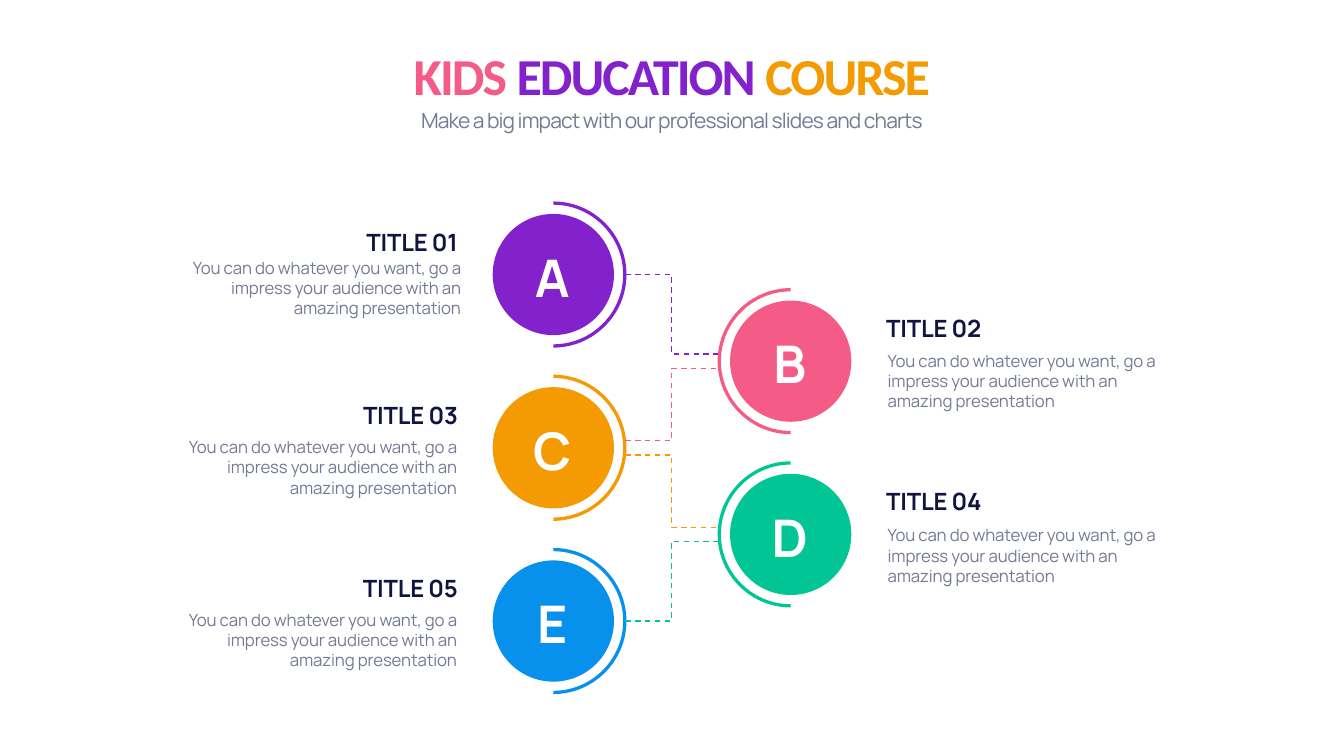
import dataclasses
import itertools

import lxml.etree
import pptx
import pptx.dml.color
import pptx.enum.dml
import pptx.enum.shapes
import pptx.enum.text
import pptx.oxml.ns
import pptx.shapes.autoshape
import pptx.slide
import pptx.util

Pt = pptx.util.Pt
RGBColor = pptx.dml.color.RGBColor
ALIGN = pptx.enum.text.PP_ALIGN
ANCHOR = pptx.enum.text.MSO_ANCHOR
qn = pptx.oxml.ns.qn

PURPLE = RGBColor(0x83, 0x22, 0xCC)
PINK = RGBColor(0xF5, 0x5B, 0x87)
ORANGE = RGBColor(0xF4, 0x9A, 0x02)
GREEN = RGBColor(0x02, 0xC5, 0x95)
BLUE = RGBColor(0x08, 0x90, 0xED)
NAVY = RGBColor(0x11, 0x13, 0x40)
GREY = RGBColor(0x74, 0x7A, 0x94)
WHITE = RGBColor(0xFF, 0xFF, 0xFF)

PAGE_WIDTH, PAGE_HEIGHT = 1919.5, 1080
LEFT_CENTER, RIGHT_CENTER = 790.3, 1129.3
FIRST_CENTER, STEP_GAP = 392.2, 123.75
DISC_RADIUS, RING_INNER, RING_OUTER = 86.6, 99.7, 104.4
LINK_LEFT, LINK_RIGHT, LINK_OFFSET = 892.8, 1025.3, 10.2
CURVE_PULL = 0.55
BODY = "You can do whatever you want, go a impress your audience with an amazing presentation"


@dataclasses.dataclass(frozen=True)
class TextStyle:
    font: dict
    tracking: int
    anchor: ANCHOR = ANCHOR.TOP
    leading: float | None = None


@dataclasses.dataclass(frozen=True)
class Step:
    letter: str
    title: str
    color: RGBColor
    body_rise: float
    body_width: float = 405.4


@dataclasses.dataclass(frozen=True)
class Area:
    left: float
    top: float
    width: float
    height: float


HEADING = TextStyle({"name": "Calibri", "size": Pt(74), "bold": True}, -290, ANCHOR.BOTTOM, 94)
SUBTITLE = TextStyle({"name": "Manrope", "size": Pt(30), "bold": False}, -120, leading=42)
STEP_TITLE = TextStyle({"name": "Manrope", "size": Pt(34), "bold": True}, -30, ANCHOR.BOTTOM)
STEP_BODY = TextStyle({"name": "Manrope", "size": Pt(24), "bold": False}, -20)
LETTER = TextStyle({"name": "Manrope", "size": Pt(74), "bold": True}, -290, ANCHOR.MIDDLE)

STEPS = [
    Step("A", "TITLE 01", PURPLE, 27.9, 411.1),
    Step("B", "TITLE 02", PINK, 19.2),
    Step("C", "TITLE 03", ORANGE, 19.1),
    Step("D", "TITLE 04", GREEN, 16.8),
    Step("E", "TITLE 05", BLUE, 20.3),
]


def add_text(page: pptx.slide.Slide, area: Area, spans: list[tuple[str, RGBColor]],
             style: TextStyle, alignment: ALIGN) -> None:
    box = page.shapes.add_textbox(*map(Pt, dataclasses.astuple(area)))
    frame = box.text_frame
    frame_format = {
        "word_wrap": True,
        "auto_size": pptx.enum.text.MSO_AUTO_SIZE.SHAPE_TO_FIT_TEXT,
        "vertical_anchor": style.anchor,
    }
    for name, value in frame_format.items():
        setattr(frame, name, value)
    para = frame.paragraphs[0]
    para.alignment = alignment
    if style.leading:
        para.line_spacing = Pt(style.leading)
    for text, color in spans:
        span = para.add_run()
        span.text = text
        for name, value in style.font.items():
            setattr(span.font, name, value)
        span.font.color.rgb = color
        span._r.get_or_add_rPr().set("spc", str(style.tracking))


def paint(shape: pptx.shapes.autoshape.Shape, color: RGBColor) -> None:
    shape.shadow.inherit = False
    shape.fill.solid()
    shape.fill.fore_color.rgb = color
    shape.line.fill.background()


def add_disc(page: pptx.slide.Slide, x: float, y: float, color: RGBColor) -> None:
    disc = page.shapes.add_shape(
        pptx.enum.shapes.MSO_SHAPE.OVAL, Pt(x - DISC_RADIUS), Pt(y - DISC_RADIUS),
        Pt(2 * DISC_RADIUS), Pt(2 * DISC_RADIUS))
    paint(disc, color)


def half_circle(x: float, y: float, radius: float, side: int) -> list[tuple[int, int]]:
    pull = CURVE_PULL
    units = [(0, -1), (pull, -1), (1, -pull), (1, 0), (1, pull), (pull, 1), (0, 1)]
    return [(Pt(x + side * radius * across), Pt(y + radius * down)) for across, down in units]


def bend(segments: list[lxml.etree._Element]) -> None:
    curve = lxml.etree.Element(qn("a:cubicBezTo"))
    segments[0].addprevious(curve)
    for segment in segments:
        curve.append(segment[0])
        segment.getparent().remove(segment)


def add_half_ring(page: pptx.slide.Slide, x: float, y: float, side: int, color: RGBColor) -> None:
    outline = half_circle(x, y, RING_OUTER, side) + half_circle(x, y, RING_INNER, side)[::-1]
    builder = page.shapes.build_freeform(*outline[0])
    builder.add_line_segments(outline[1:], close=True)
    ring = builder.convert_to_shape()
    segments = list(ring._element.iter(qn("a:lnTo")))
    for first in (0, 3, 7, 10):
        bend(segments[first:first + 3])
    paint(ring, color)


def add_link(page: pptx.slide.Slide, left_y: float, right_y: float, color: RGBColor) -> None:
    link = page.shapes.add_connector(
        pptx.enum.shapes.MSO_CONNECTOR.ELBOW,
        Pt(LINK_LEFT), Pt(left_y), Pt(LINK_RIGHT), Pt(right_y))
    link.line.color.rgb = color
    line_format = {"width": Pt(2), "dash_style": pptx.enum.dml.MSO_LINE.DASH}
    for name, value in line_format.items():
        setattr(link.line, name, value)
    lxml.etree.SubElement(link._element.spPr, qn("a:effectLst"))


def add_step(page: pptx.slide.Slide, step: Step, y: float, on_left: bool) -> None:
    x = LEFT_CENTER if on_left else RIGHT_CENTER
    title_left, body_left = (190, 254.2) if on_left else (1258.6, 1260.7)
    alignment = ALIGN.RIGHT if on_left else ALIGN.LEFT
    add_disc(page, x, y, step.color)
    add_half_ring(page, x, y, 1 if on_left else -1, step.color)
    add_text(page, Area(x - 49.3, y - 45.9, 95.8, 97.2), [(step.letter, WHITE)],
             LETTER, ALIGN.CENTER)
    add_text(page, Area(title_left, y - 71.3, 471, 48.2), [(step.title, NAVY)],
             STEP_TITLE, alignment)
    add_text(page, Area(body_left, y - step.body_rise, step.body_width, 94.3), [(BODY, GREY)],
             STEP_BODY, alignment)


def main() -> None:
    deck = pptx.Presentation()
    deck.slide_width, deck.slide_height = Pt(PAGE_WIDTH), Pt(PAGE_HEIGHT)
    page = deck.slides.add_slide(deck.slide_layouts[6])

    centers = [FIRST_CENTER + STEP_GAP * index for index in range(len(STEPS))]
    for index, (step, y) in enumerate(zip(STEPS, centers)):
        add_step(page, step, y, index % 2 == 0)

    last = len(STEPS) - 2
    for index, (upper, lower) in enumerate(itertools.pairwise(centers)):
        start = upper + (LINK_OFFSET if index > 0 else 0)
        end = lower - (LINK_OFFSET if index < last else 0)
        left_y, right_y = (start, end) if index % 2 == 0 else (end, start)
        add_link(page, left_y, right_y, STEPS[index].color)

    add_text(page, Area(119.5, 144.7, 1679.8, 47.5),
             [("Make a big impact with our professional slides and charts", GREY)],
             SUBTITLE, ALIGN.CENTER)
    add_text(page, Area(119.5, 54.7, 1679.8, 99.4),
             [("KIDS ", PINK), ("EDUCATION", PURPLE), (" COURSE", ORANGE)],
             HEADING, ALIGN.CENTER)
    deck.save("out.pptx")


if __name__ == "__main__":
    main()
